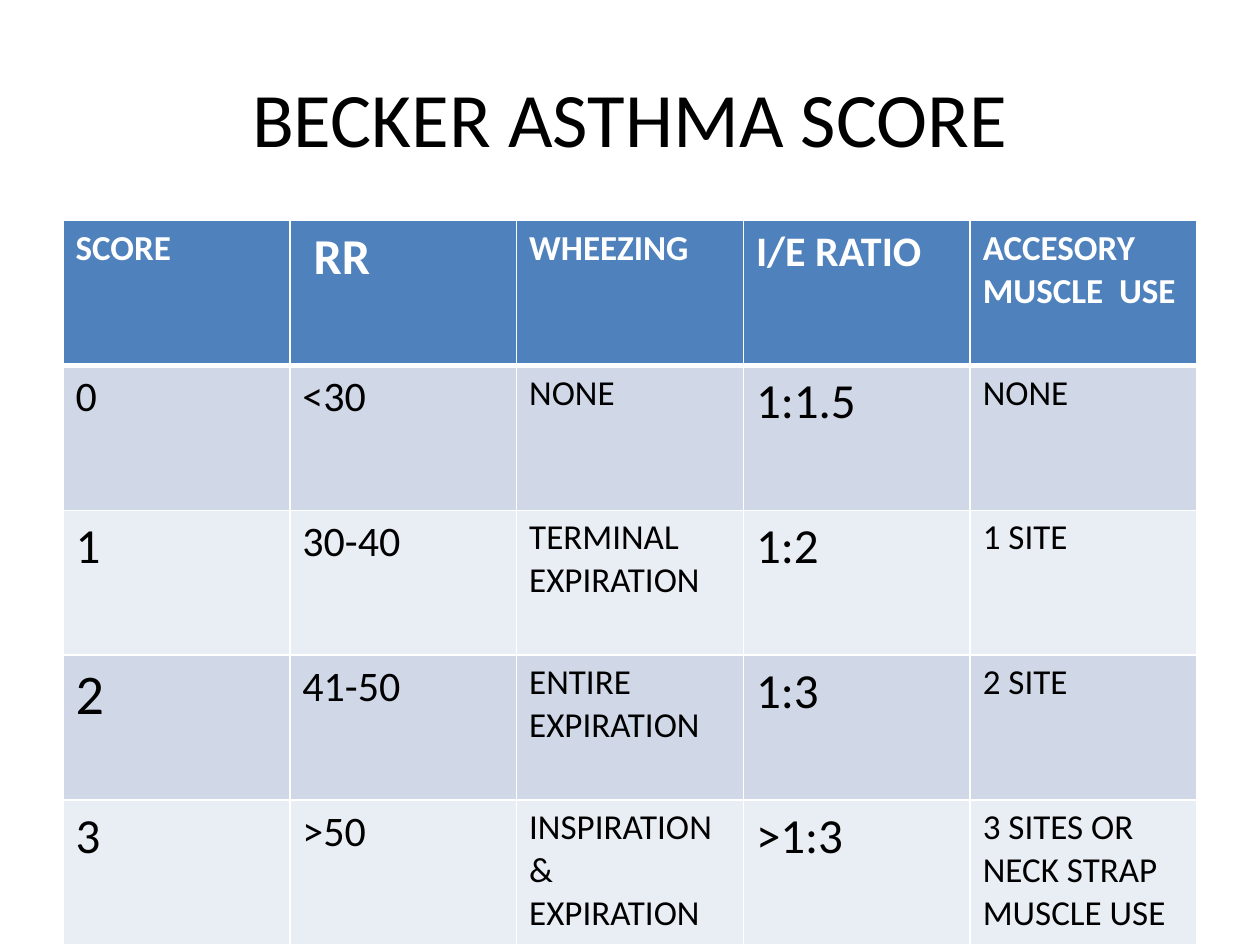
from lxml.etree import SubElement
from pptx import Presentation
from pptx.dml.color import RGBColor
from pptx.enum.text import MSO_ANCHOR, PP_ALIGN
from pptx.oxml.ns import qn
from pptx.util import Pt

PX = 9144
THEME = {
    "font": "Calibri",
    "text": "000000",
    "header_text": "FFFFFF",
    "header": "4F81BD",
    "bands": ("D0D8E8", "E9EDF4"),
    "border": "FFFFFF",
    "title": 44,
    "huge": 32,
    "heading": 28.7,
    "large": 28,
    "medium": 24,
    "small": 20,
}
ROWS = [
    ("SCORE", " RR", "WHEEZING", "I/E RATIO", "ACCESORY MUSCLE  USE"),
    ("0", "<30", "NONE", "1:1.5", "NONE"),
    ("1", "30-40", "TERMINAL EXPIRATION", "1:2", "1 SITE"),
    ("2", "41-50", "ENTIRE EXPIRATION", "1:3", "2 SITE"),
    ("3", ">50", "INSPIRATION& EXPIRATION", ">1:3", "3 SITES OR NECK STRAP MUSCLE USE"),
]
HEADER_SIZES = ("small", "heading", "small", "medium", "small")
BODY_SIZES = ("large", "medium", "small", "large", "small")
SCORE_SIZES = {"0": "medium", "2": "huge"}


def write(p, text, size, color, bold=False):
    r = p.add_run()
    r.text = text
    fmt = {"name": THEME["font"], "size": Pt(THEME[size]), "bold": bold}
    for name, value in fmt.items():
        setattr(r.font, name, value)
    r.font.color.rgb = RGBColor.from_string(THEME[color])


def add_border(cell, side, width):
    ln = SubElement(cell._tc.get_or_add_tcPr(), qn(f"a:ln{side}"), w=str(Pt(width)))
    fill = SubElement(ln, qn("a:solidFill"))
    SubElement(fill, qn("a:srgbClr"), val=THEME["border"])


prs = Presentation()
prs.slide_width, prs.slide_height = 1000 * PX, 750 * PX
s = prs.slides.add_slide(prs.slide_layouts[5])

title = s.shapes.title
box = {"left": 50, "top": 30, "width": 900, "height": 125}
for name, value in box.items():
    setattr(title, name, value * PX)
tf = title.text_frame
tf.vertical_anchor = MSO_ANCHOR.MIDDLE
p = tf.paragraphs[0]
p.alignment = PP_ALIGN.CENTER
write(p, "BECKER ASTHMA SCORE", "title", "text")

frame = s.shapes.add_table(len(ROWS), len(ROWS[0]), 50 * PX, 175 * PX, 900 * PX, 575 * PX)
table = frame.table
for i, row in enumerate(ROWS):
    header = i == 0
    sizes = HEADER_SIZES if header else BODY_SIZES
    color = "header_text" if header else "text"
    background = THEME["header"] if header else THEME["bands"][(i - 1) % 2]
    for j, text in enumerate(row):
        cell = table.cell(i, j)
        size = SCORE_SIZES.get(text, sizes[j])
        write(cell.text_frame.paragraphs[0], text, size, color, header)
        for side in "LRTB":
            thick = (i == 0 and side == "B") or (i == 1 and side == "T")
            add_border(cell, side, 3 if thick else 1)
        cell.fill.solid()
        cell.fill.fore_color.rgb = RGBColor.from_string(background)

prs.save("out.pptx")
